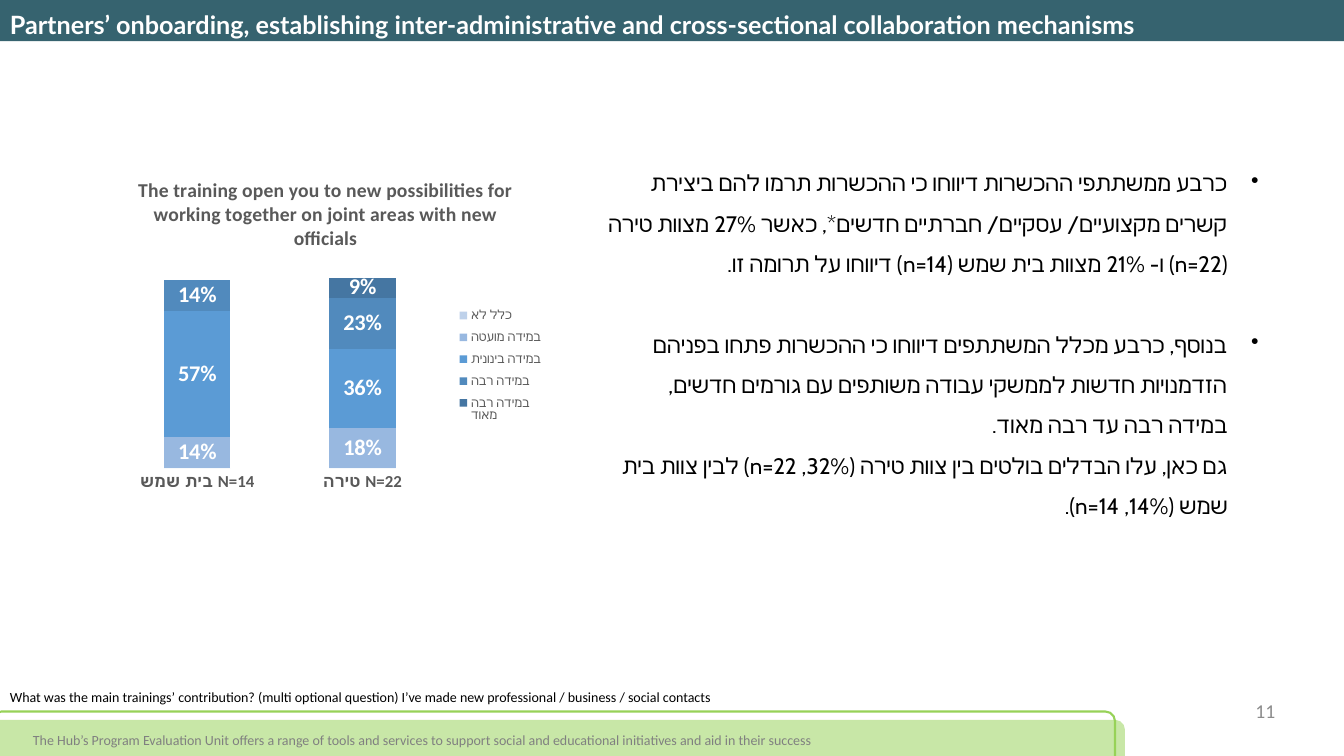
"""Build the slide on partners' onboarding with its stacked chart."""
import dataclasses
import typing

import lxml.etree
import pptx
import pptx.chart.data
import pptx.dml.color
import pptx.enum.chart
import pptx.enum.shapes
import pptx.enum.text
import pptx.oxml.ns
import pptx.util

Cm = pptx.util.Cm
Pt = pptx.util.Pt
qn = pptx.oxml.ns.qn

COLOURS = {
    "header": "36636F", "band": "C8E7A7", "outline": "97D258", "white": "FFFFFF",
    "black": "000000", "grey": "808080", "number": "8C8C8C", "chart": "595959",
}
FINDINGS = (
    "כרבע ממשתתפי ההכשרות דיווחו כי ההכשרות תרמו להם ביצירת קשרים מקצועיים/ עסקיים/ "
    "חברתיים חדשים*, כאשר 27% מצוות טירה (n=22) ו- 21% מצוות בית שמש (n=14) דיווחו על תרומה זו. ",
    "בנוסף, כרבע מכלל המשתתפים דיווחו כי ההכשרות פתחו בפניהם הזדמנויות חדשות לממשקי עבודה "
    "משותפים עם גורמים חדשים, במידה רבה עד רבה מאוד. \v"
    "גם כאן, עלו הבדלים בולטים בין צוות טירה (32%, n=22) לבין צוות בית שמש (14%, n=14).",
)
TEAMS = ("טירה N=22", "בית שמש N=14")


@dataclasses.dataclass(frozen=True)
class Place:
    """Position and size in centimetres."""
    left: float
    top: float
    width: float
    height: float

    def lengths(self) -> tuple:
        """Return the four lengths for python-pptx."""
        return tuple(Cm(value) for value in dataclasses.astuple(self))


@dataclasses.dataclass(frozen=True)
class Label:
    """A single-line text box."""
    text: str
    place: Place
    size: float
    colour: str


@dataclasses.dataclass(frozen=True)
class Answer:
    """One answer level with its share in each team."""
    name: str
    shares: tuple
    colour: str


NUMBER = Label("11", Place(31.39, 17.4, 1.78, 1.02), 14, "number")
QUESTION = Label(
    "What was the main trainings’ contribution? (multi optional question) "
    "I’ve made new professional / business / social contacts",
    Place(0, 17.22, 21.46, 0.69), 10, "black")
TAGLINE = Label(
    "The Hub’s Program Evaluation Unit offers a range of tools and services to support "
    "social and educational initiatives and aid in their success",
    Place(0.58, 18.31, 28.68, 0.69), 10, "grey")
ANSWERS = (
    Answer("כלל לא", (0, 0), "BED1EA"),
    Answer("במידה מועטה", (0.18, 0.14), "98B8E0"),
    Answer("במידה בינונית", (0.36, 0.57), "5B9BD5"),
    Answer("במידה רבה", (0.23, 0.14), "518ABD"),
    Answer("במידה רבה מאוד", (0.09, 0), "4576A2"),
)


def rgb(value: str) -> pptx.dml.color.RGBColor:
    """Turn a hex string into a colour."""
    return pptx.dml.color.RGBColor.from_string(value)


def set_font(font: typing.Any, size: float, colour: str, name: str = "Calibri",
             bold: bool = False) -> None:
    """Set size, colour, typeface and weight."""
    font.size, font.name, font.bold = Pt(size), name, bold
    font.color.rgb = rgb(COLOURS[colour])


def add_block(shapes: typing.Any, kind: typing.Any, place: Place, fill: str = "",
              line: str = "") -> typing.Any:
    """Add a preset shape with only the given fill and line."""
    block = shapes.add_shape(kind, *place.lengths())
    block.shadow.inherit = False
    if fill:
        block.fill.solid()
        block.fill.fore_color.rgb = rgb(COLOURS[fill])
    else:
        block.fill.background()
    if line:
        block.line.color.rgb = rgb(COLOURS[line])
        block.line.width = Pt(1.5)
    else:
        block.line.fill.background()
    return block


def add_label(shapes: typing.Any, label: Label) -> typing.Any:
    """Add a wrapped text box and return its frame."""
    frame = shapes.add_textbox(*label.place.lengths()).text_frame
    frame.word_wrap = True
    frame.text = label.text
    set_font(frame.paragraphs[0].font, label.size, label.colour)
    return frame


def add_header(shapes: typing.Any) -> None:
    """Add the title bar."""
    kinds = pptx.enum.shapes.MSO_SHAPE
    frame = add_block(shapes, kinds.RECTANGLE, Place(0, 0, 33.87, 1.04), "header").text_frame
    frame.word_wrap = True
    frame.vertical_anchor = pptx.enum.text.MSO_ANCHOR.TOP
    frame.text = ("Partners’ onboarding, establishing inter-administrative and "
                  "cross-sectional collaboration mechanisms")
    para = frame.paragraphs[0]
    para.alignment = pptx.enum.text.PP_ALIGN.LEFT
    para.line_spacing, para.space_after = 1.15, Pt(10)
    set_font(para.font, 18, "white", "Lato", True)


def add_footer(shapes: typing.Any) -> None:
    """Add the grouped footer band, outline and tagline."""
    group = shapes.add_group_shape().shapes
    rounded = pptx.enum.shapes.MSO_SHAPE.ROUNDED_RECTANGLE
    add_block(group, rounded, Place(-0.33, 18.14, 28.68, 1.45), fill="band")
    add_block(group, rounded, Place(-0.2, 17.93, 28.3, 1.45), line="outline")
    add_label(group, TAGLINE)


def add_findings(shapes: typing.Any) -> None:
    """Add the right-to-left bullets."""
    frame = shapes.add_textbox(*Place(15.02, 3.81, 16.96, 10.39).lengths()).text_frame
    frame.word_wrap = True
    for index, finding in enumerate(FINDINGS):
        para = frame.add_paragraph() if index else frame.paragraphs[0]
        para.text = finding
        para.alignment = pptx.enum.text.PP_ALIGN.RIGHT
        para.line_spacing, para.space_before = 1.5, Pt(29 * index)
        set_font(para.font, 16, "black", "Cabin")
        properties = para._p.get_or_add_pPr()
        for key, value in (("rtl", "1"), ("marL", str(Cm(0.79))), ("indent", str(-Cm(0.79)))):
            properties.set(key, value)
        defaults = properties.find(qn("a:defRPr"))
        lxml.etree.SubElement(defaults, qn("a:cs"), typeface="Cabin")
        bullet = lxml.etree.Element(qn("a:buChar"), char="•")
        defaults.addprevious(bullet)


def set_layout(parent: typing.Any, index: int, inner: bool = False, **fractions: float) -> None:
    """Place a chart part by fractions of the chart area."""
    for previous in parent.findall(qn("c:layout")):
        parent.remove(previous)
    layout = lxml.etree.Element(qn("c:layout"))
    manual = lxml.etree.SubElement(layout, qn("c:manualLayout"))
    settings = {"layoutTarget": "inner"} if inner else {}
    settings |= {"xMode": "edge", "yMode": "edge"}
    settings |= {key: str(value) for key, value in fractions.items()}
    for key, value in settings.items():
        lxml.etree.SubElement(manual, qn(f"c:{key}"), val=value)
    parent.insert(index, layout)


def add_shares(shapes: typing.Any) -> None:
    """Add the stacked column chart of answers by team."""
    kinds = pptx.enum.chart
    data = pptx.chart.data.CategoryChartData(number_format="0%")
    data.categories = TEAMS
    for answer in ANSWERS:
        data.add_series(answer.name, answer.shares)
    place = Place(1.88, 3.63, 12.62, 10.34)
    chart = shapes.add_chart(kinds.XL_CHART_TYPE.COLUMN_STACKED, *place.lengths(), data).chart
    set_font(chart.font, 10, "black")

    title = chart.chart_title
    title.text_frame.text = ("The training open you to new possibilities for working together "
                             "on joint areas with new officials")
    set_font(title.text_frame.paragraphs[0].font, 14, "chart", bold=True)
    set_layout(title._element, 1, x=0.12, y=0.07)

    chart.has_legend = True
    chart.legend.position = kinds.XL_LEGEND_POSITION.BOTTOM
    chart.legend.include_in_layout = False
    set_font(chart.legend.font, 9, "chart")
    set_layout(chart.legend._element, 1, x=0.76, y=0.38, w=0.18, h=0.32)

    teams, scale = chart.category_axis, chart.value_axis
    teams.reverse_order = True
    teams.major_tick_mark = kinds.XL_TICK_MARK.NONE
    teams.format.line.fill.background()
    set_font(teams.tick_labels.font, 12, "chart", bold=True)
    scale.minimum_scale, scale.maximum_scale = 0, 1
    scale.has_major_gridlines = scale.visible = False

    plot = chart.plots[0]
    plot.gap_width, plot.overlap, plot.vary_by_categories = 150, 100, False
    set_layout(chart._chartSpace.chart.plotArea, 0, True, x=0.08, y=0.25, w=0.66, h=0.54)
    for answer, series in zip(ANSWERS, plot.series):
        series.format.fill.solid()
        series.format.fill.fore_color.rgb = rgb(answer.colour)
        if not any(answer.shares):
            continue
        labels = series.data_labels
        labels.show_value = True
        labels.number_format, labels.number_format_is_linked = "0%", False
        set_font(labels.font, 16, "white", bold=True)
        for index, share in enumerate(answer.shares):
            if not share:
                hidden = lxml.etree.Element(qn("c:dLbl"))
                lxml.etree.SubElement(hidden, qn("c:idx"), val=str(index))
                lxml.etree.SubElement(hidden, qn("c:delete"), val="1")
                labels._element.insert(0, hidden)


def main() -> None:
    """Build and save the deck."""
    deck = pptx.Presentation()
    deck.slide_width, deck.slide_height = Cm(33.87), Cm(19.05)
    shapes = deck.slides.add_slide(deck.slide_layouts[6]).shapes
    add_label(shapes, NUMBER).vertical_anchor = pptx.enum.text.MSO_ANCHOR.MIDDLE
    add_header(shapes)
    add_footer(shapes)
    add_findings(shapes)
    add_shares(shapes)
    add_label(shapes, QUESTION)
    deck.save("out.pptx")


if __name__ == "__main__":
    main()
